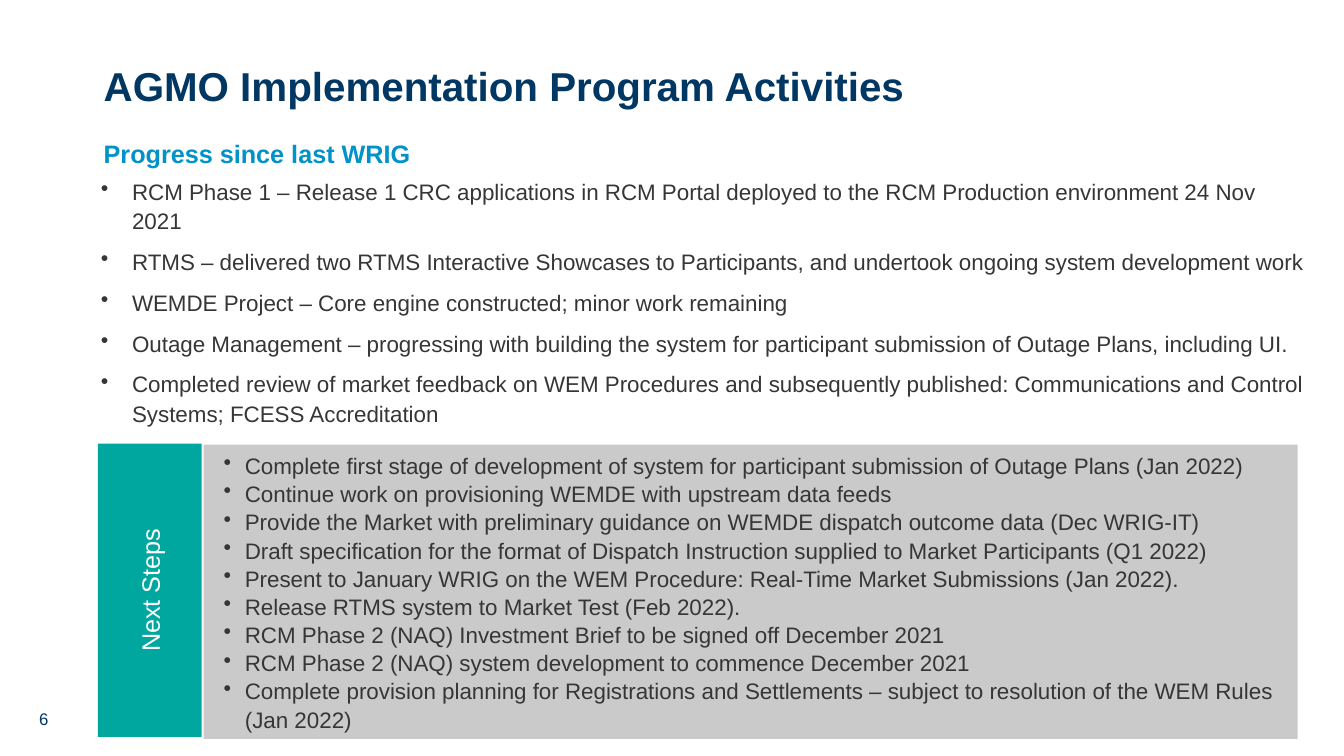
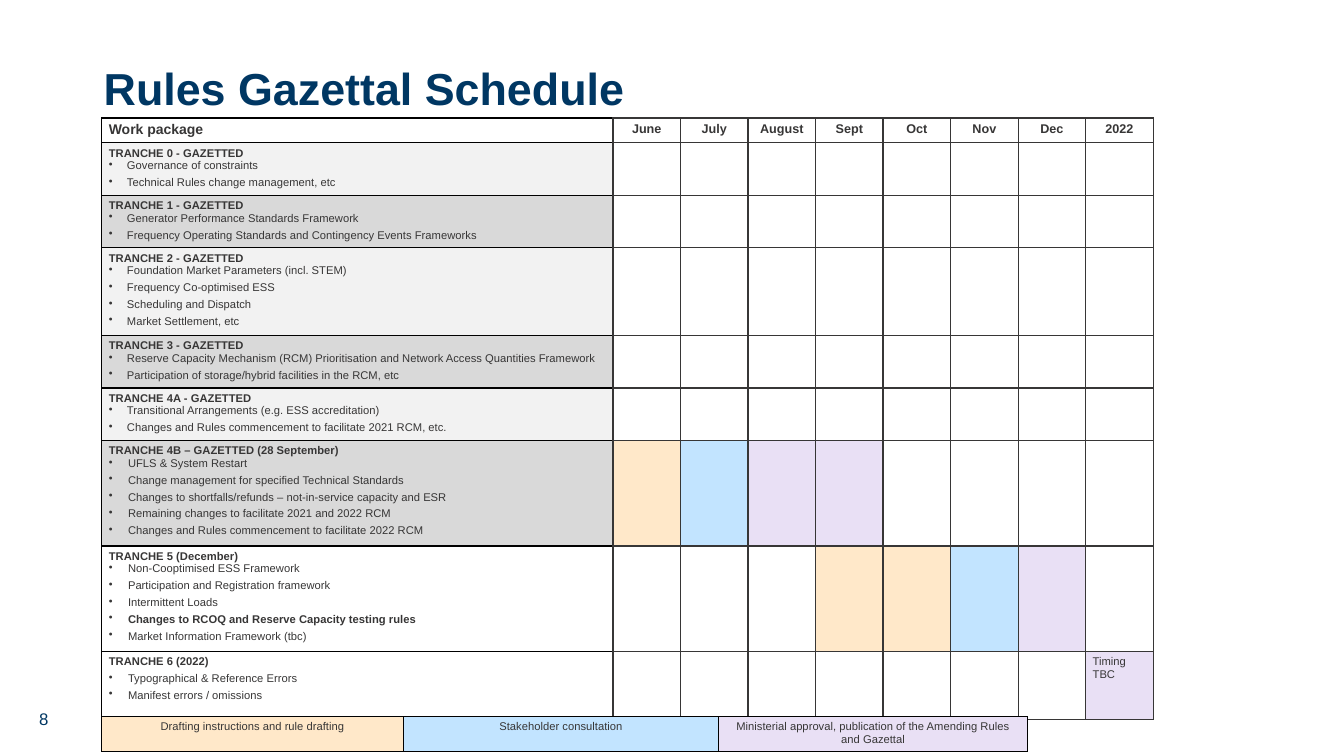
from pptx import Presentation
from pptx.dml.color import RGBColor
from pptx.enum import shapes, text
from pptx.oxml import parse_xml
from pptx.oxml.ns import nsdecls
from pptx.util import Inches, Pt

FONT = "Arial"
COLORS = {
    "navy": "003763", "blue": "0092C8", "ink": "373636", "white": "FFFFFF",
    "teal": "00A79F", "panel": "CACACA", "light": "F2F2F2", "mid": "D9D9D9",
    "black": "000000", "drafting": "FFE8C9", "consultation": "C2E4FF",
    "approval": "E9E0F5",
}
CENTER = text.PP_ALIGN.CENTER
TOP, MIDDLE = text.MSO_ANCHOR.TOP, text.MSO_ANCHOR.MIDDLE


def add_para(frame, words, size, color="ink", bold=False, align=None,
             bullet=None, spacing=None, after=0):
    """Add one paragraph; bullet is (left margin, hanging indent) in inches."""
    first = frame.paragraphs[0]
    para = frame.add_paragraph() if first.runs else first
    if bullet:
        margin, hang = bullet
        props = para._p.get_or_add_pPr()
        props.set("marL", str(Inches(margin)))
        props.set("indent", str(-Inches(hang)))
        props.append(parse_xml(f'<a:buChar {nsdecls("a")} char="•"/>'))
    para.alignment = align
    para.line_spacing = spacing
    para.space_after = Pt(after)
    span = para.add_run()
    span.text = words
    span.font.name, span.font.size, span.font.bold = FONT, Pt(size), bold
    span.font.color.rgb = RGBColor.from_string(COLORS[color])


def style_cell(cell, fill="white", border="ink"):
    cell.margin_left = cell.margin_right = Inches(0.07)
    cell.margin_top = cell.margin_bottom = Inches(0.04)
    props = cell._tc.get_or_add_tcPr()
    for side in "LRTB":
        props.append(parse_xml(
            f'<a:ln{side} {nsdecls("a")} w="{Pt(1)}"><a:solidFill>'
            f'<a:srgbClr val="{COLORS[border]}"/></a:solidFill></a:ln{side}>'))
    cell.fill.solid()
    cell.fill.fore_color.rgb = RGBColor.from_string(COLORS[fill])


deck = Presentation()
deck.slide_width, deck.slide_height = Inches(13.33), Inches(7.5)

# Title and page number, shared by both slides
pages = []
for title, size, number in [("AGMO Implementation Program Activities", 28.8, "6"),
                            ("Rules Gazettal Schedule", 32, "8")]:
    page = deck.slides.add_slide(deck.slide_layouts[6])
    pages.append(page)
    for place, anchor, words, style in [
        ((0.93, 0.58, 11.49, 0.64), TOP, title,
         dict(size=size, bold=True, spacing=0.9)),
        ((0.29, 6.93, 3, 0.4), MIDDLE, number, dict(size=12)),
    ]:
        frame = page.shapes.add_textbox(*map(Inches, place)).text_frame
        frame.word_wrap = True
        frame.vertical_anchor = anchor
        if anchor == TOP:
            frame.margin_top = Inches(0.08)
        add_para(frame, words, color="navy", **style)
activities, schedule = pages

# Activities: progress
subtitle = activities.shapes.add_textbox(
    Inches(0.93), Inches(1.26), Inches(11.49), Inches(0.43)).text_frame
subtitle.word_wrap = True
add_para(subtitle, "Progress since last WRIG", 18, "blue", True, spacing=1.2)

progress = activities.shapes.add_textbox(
    Inches(0.92), Inches(1.69), Inches(12.22), Inches(3.73)).text_frame
progress.word_wrap = True
progress.margin_left, progress.margin_right = Inches(0.08), Inches(0.15)
for item in [
    "RCM Phase 1 – Release 1 CRC applications in RCM Portal deployed to the RCM Production environment 24 Nov 2021",
    "RTMS – delivered two RTMS Interactive Showcases to Participants, and undertook ongoing system development work",
    "WEMDE Project – Core engine constructed; minor work remaining",
    "Outage Management – progressing with building the system for participant submission of Outage Plans, including UI.",
    "Completed review of market feedback on WEM Procedures and subsequently published: Communications and Control Systems; FCESS Accreditation",
]:
    add_para(progress, item, 16, bullet=(0.31, 0.31), spacing=1.1, after=8)

# Activities: next steps
panels = []
for place, fill in [((2.02, 4.41, 10.85, 2.92), "panel"),
                    ((0.97, 4.4, 1.03, 2.91), "teal")]:
    panel = activities.shapes.add_shape(
        shapes.MSO_SHAPE.RECTANGLE, *map(Inches, place))
    panel.shadow.inherit = False
    panel.fill.solid()
    panel.fill.fore_color.rgb = RGBColor.from_string(COLORS[fill])
    panel.line.fill.background()
    panel.text_frame.word_wrap = True
    panel.text_frame.vertical_anchor = MIDDLE
    panels.append(panel)
steps, steps_label = panels

steps_label.text_frame._txBody.bodyPr.set("vert", "vert270")
add_para(steps_label.text_frame, "Next Steps", 18, "white", align=CENTER)
for item in [
    "Complete first stage of development of system for participant submission of Outage Plans (Jan 2022)",
    "Continue work on provisioning WEMDE with upstream data feeds",
    "Provide the Market with preliminary guidance on WEMDE dispatch outcome data (Dec WRIG-IT)",
    "Draft specification for the format of Dispatch Instruction supplied to Market Participants (Q1 2022)",
    "Present to January WRIG on the WEM Procedure: Real-Time Market Submissions (Jan 2022).",
    "Release RTMS system to Market Test (Feb 2022).",
    "RCM Phase 2 (NAQ) Investment Brief to be signed off December 2021",
    "RCM Phase 2 (NAQ) system development to commence December 2021",
    "Complete provision planning for Registrations and Settlements – subject to resolution of the WEM Rules (Jan 2022)",
]:
    add_para(steps.text_frame, item, 16, align=text.PP_ALIGN.LEFT,
             bullet=(0.31, 0.21), spacing=1.05)

# Schedule: work packages by month
MONTHS = ["June", "July", "August", "Sept", "Oct", "Nov", "Dec", "2022"]
BOLD_ITEM = "Changes to RCOQ and Reserve Capacity testing rules"
# heading, fill, row height, items, stage by month
TRANCHES = [
    ("TRANCHE 0 - GAZETTED", "light", 0.5,
     ["Governance of constraints", "Technical Rules change management, etc"], {}),
    ("TRANCHE 1 - GAZETTED", "mid", 0.5,
     ["Generator Performance Standards Framework",
      "Frequency Operating Standards and Contingency Events Frameworks"], {}),
    ("TRANCHE 2 - GAZETTED", "light", 0.84,
     ["Foundation Market Parameters (incl. STEM)", "Frequency Co-optimised ESS",
      "Scheduling and Dispatch", "Market Settlement, etc"], {}),
    ("TRANCHE 3 - GAZETTED", "mid", 0.5,
     ["Reserve Capacity Mechanism (RCM) Prioritisation and Network Access Quantities Framework",
      "Participation of storage/hybrid facilities in the RCM, etc"], {}),
    ("TRANCHE 4A - GAZETTED", "light", 0.5,
     ["Transitional Arrangements (e.g. ESS accreditation)",
      "Changes and Rules commencement to facilitate 2021 RCM, etc."], {}),
    ("TRANCHE 4B – GAZETTED (28 September)", "mid", 1,
     ["UFLS & System Restart", "Change management for specified Technical Standards",
      "Changes to shortfalls/refunds – not-in-service capacity and ESR",
      "Remaining changes to facilitate 2021 and 2022 RCM",
      "Changes and Rules commencement to facilitate 2022 RCM"],
     {"June": "drafting", "July": "consultation", "August": "approval",
      "Sept": "approval"}),
    ("TRANCHE 5 (December)", "white", 1,
     ["Non-Cooptimised ESS Framework", "Participation and Registration framework",
      "Intermittent Loads", BOLD_ITEM, "Market Information Framework (tbc)"],
     {"Sept": "drafting", "Oct": "drafting", "Nov": "consultation",
      "Dec": "approval"}),
    ("TRANCHE 6 (2022)", "white", 0.68,
     ["Typographical & Reference Errors", "Manifest errors / omissions"],
     {"2022": "approval"}),
]
grid = schedule.shapes.add_table(
    len(TRANCHES) + 1, len(MONTHS) + 1,
    Inches(1.01), Inches(1.17), Inches(10.43), Inches(5.75)).table
grid.first_row = grid.horz_banding = False
grid.columns[0].width = Inches(5.07)
grid.rows[0].height = Inches(0.23)
style_cell(grid.cell(0, 0), border="black")
add_para(grid.cell(0, 0).text_frame, "Work package", 10, bold=True)
for col, month in enumerate(MONTHS, 1):
    grid.columns[col].width = Inches(0.67)
    style_cell(grid.cell(0, col))
    add_para(grid.cell(0, col).text_frame, month, 9, bold=True, align=CENTER)

for row, (heading, fill, height, items, stages) in enumerate(TRANCHES, 1):
    grid.rows[row].height = Inches(height)
    package = grid.cell(row, 0)
    style_cell(package, fill, "black")
    last = row == len(TRANCHES)
    add_para(package.text_frame, heading, 8, bold=True, after=3 if last else 0)
    indent = 0.19 if row > 5 else 0.18
    for item in items:
        add_para(package.text_frame, item, 8, bold=item == BOLD_ITEM,
                 bullet=(indent, indent), after=3)
    for col, month in enumerate(MONTHS, 1):
        style_cell(grid.cell(row, col), stages.get(month, "white"))
add_para(grid.cell(len(TRANCHES), len(MONTHS)).text_frame, "Timing TBC", 8)

# Schedule: legend
LEGEND = [
    ("drafting", 2.99, "Drafting instructions and rule drafting"),
    ("consultation", 3.13, "Stakeholder consultation"),
    ("approval", 3.06,
     "Ministerial approval, publication of the Amending Rules and Gazettal"),
]
legend = schedule.shapes.add_table(
    1, len(LEGEND), Inches(1.01), Inches(7.11), Inches(9.18), Inches(0.34)).table
legend.first_row = legend.horz_banding = False
for col, (stage, width, words) in enumerate(LEGEND):
    legend.columns[col].width = Inches(width)
    style_cell(legend.cell(0, col), stage, "black")
    add_para(legend.cell(0, col).text_frame, words, 8, align=CENTER)

deck.save("out.pptx")
